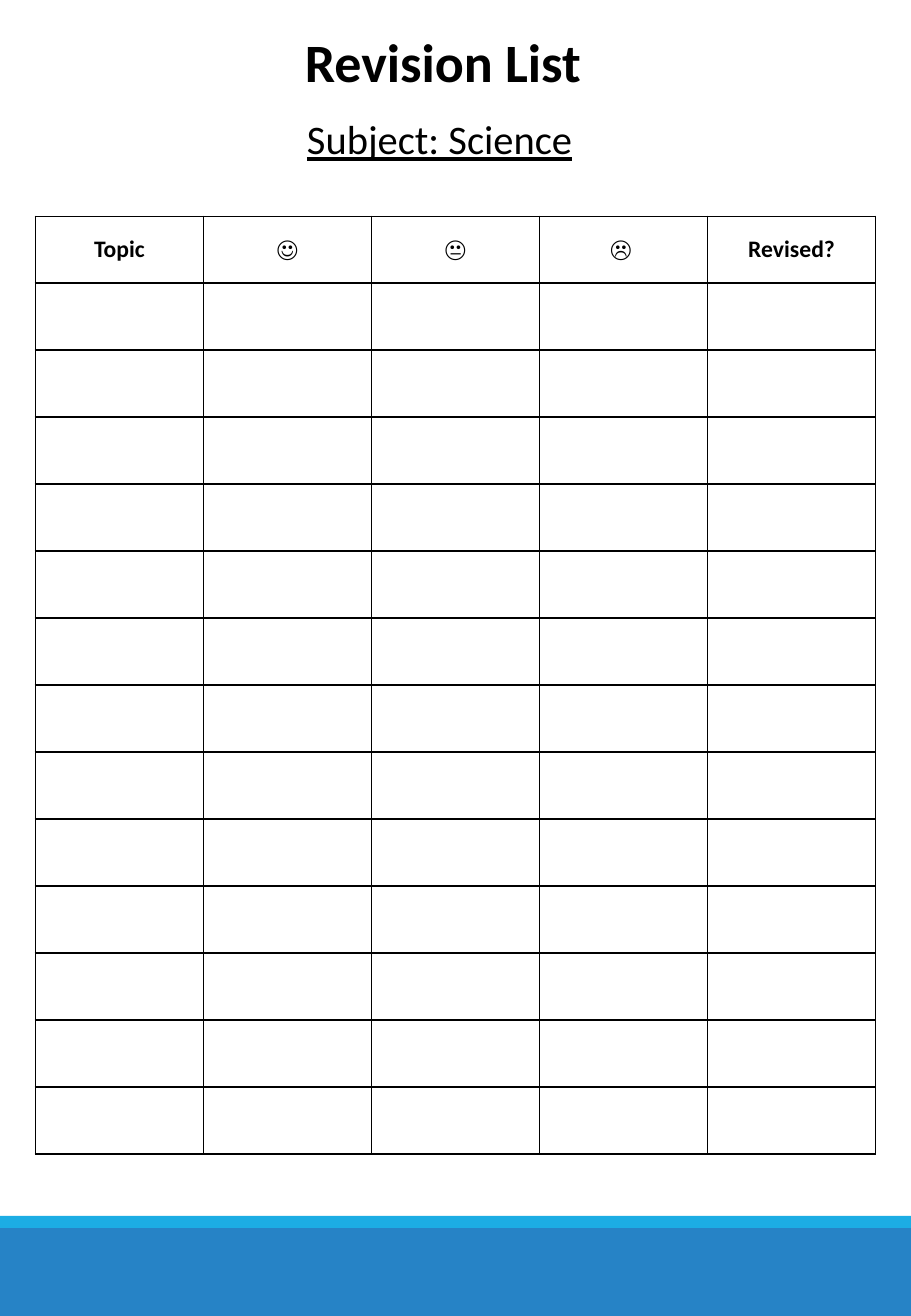
from dataclasses import dataclass

from lxml.etree import SubElement
from pptx import Presentation
from pptx.dml.color import RGBColor
from pptx.enum.shapes import MSO_SHAPE
from pptx.enum.text import MSO_ANCHOR, PP_ALIGN
from pptx.oxml.ns import qn
from pptx.util import Cm, Pt


@dataclass(frozen=True)
class Theme:
    font: str = "Calibri"
    ink: str = "000000"
    band: str = "2683C6"
    stripe: str = "1CADE4"
    title: int = 32
    subject: int = 24
    header: int = 14
    border: int = 1


THEME = Theme()
WIDTH, HEIGHT = 19.05, 27.51
HEADERS = ["Topic", "☺", "😐", "☹ ", "Revised?"]
TOPIC_ROWS = 13


def place(sp, x, y, w, h):
    sp.left, sp.top, sp.width, sp.height = Cm(x), Cm(y), Cm(w), Cm(h)


def write(tf, text, size, align=PP_ALIGN.LEFT, bold=False, underline=False):
    tf.text = text
    p = tf.paragraphs[0]
    p.alignment = align
    p.font.name, p.font.size = THEME.font, Pt(size)
    p.font.bold, p.font.underline = bold, underline
    p.font.color.rgb = RGBColor.from_string(THEME.ink)


def add_footer(slide, x, y, w, h):
    """Draw a thin stripe with a deep band below it."""
    stripe_h = 0.25
    for top, height, color in [
        (y + stripe_h, h - stripe_h, THEME.band),
        (y, stripe_h, THEME.stripe),
    ]:
        sp = slide.shapes.add_shape(
            MSO_SHAPE.RECTANGLE, Cm(x), Cm(top), Cm(w), Cm(height))
        sp.shadow.inherit = False
        sp.fill.solid()
        sp.fill.fore_color.rgb = RGBColor.from_string(color)
        sp.line.fill.background()


def add_heading(slide, x, y, w):
    title = slide.shapes.title
    place(title, x, y, w, 1.62)
    title.text_frame.vertical_anchor = MSO_ANCHOR.TOP
    write(title.text_frame, "Revision List", THEME.title, bold=True)

    subject = slide.shapes.add_textbox(Cm(x + 0.05), Cm(y + 1.8), Cm(w), Cm(1.28))
    subject.text_frame.word_wrap = True
    write(subject.text_frame, "Subject: Science", THEME.subject, underline=True)


def add_borders(cell):
    tc_pr = cell._tc.get_or_add_tcPr()
    for side in ("a:lnL", "a:lnR", "a:lnT", "a:lnB"):
        ln = SubElement(tc_pr, qn(side), w=str(Pt(THEME.border)))
        fill = SubElement(ln, qn("a:solidFill"))
        SubElement(fill, qn("a:srgbClr"), val=THEME.ink)


def add_checklist(slide, x, y, w, h):
    table = slide.shapes.add_table(
        TOPIC_ROWS + 1, len(HEADERS), Cm(x), Cm(y), Cm(w), Cm(h)).table
    table.first_row = table.horz_banding = False
    for cell in table.iter_cells():
        add_borders(cell)
        cell.fill.background()
        cell.vertical_anchor = MSO_ANCHOR.MIDDLE
    for cell, text in zip(table.rows[0].cells, HEADERS):
        write(cell.text_frame, text, THEME.header, PP_ALIGN.CENTER, bold=True)


def main():
    prs = Presentation()
    prs.slide_width, prs.slide_height = Cm(WIDTH), Cm(HEIGHT)
    slide = prs.slides.add_slide(prs.slide_layouts[5])
    footer_h = 2.09
    margin = 0.74
    add_footer(slide, 0, HEIGHT - footer_h, WIDTH, footer_h)
    add_heading(slide, 6.12, 0.46, 8.13)
    add_checklist(slide, margin, 4.52, WIDTH - 2 * margin, 19.6)
    prs.save("out.pptx")


if __name__ == "__main__":
    main()
